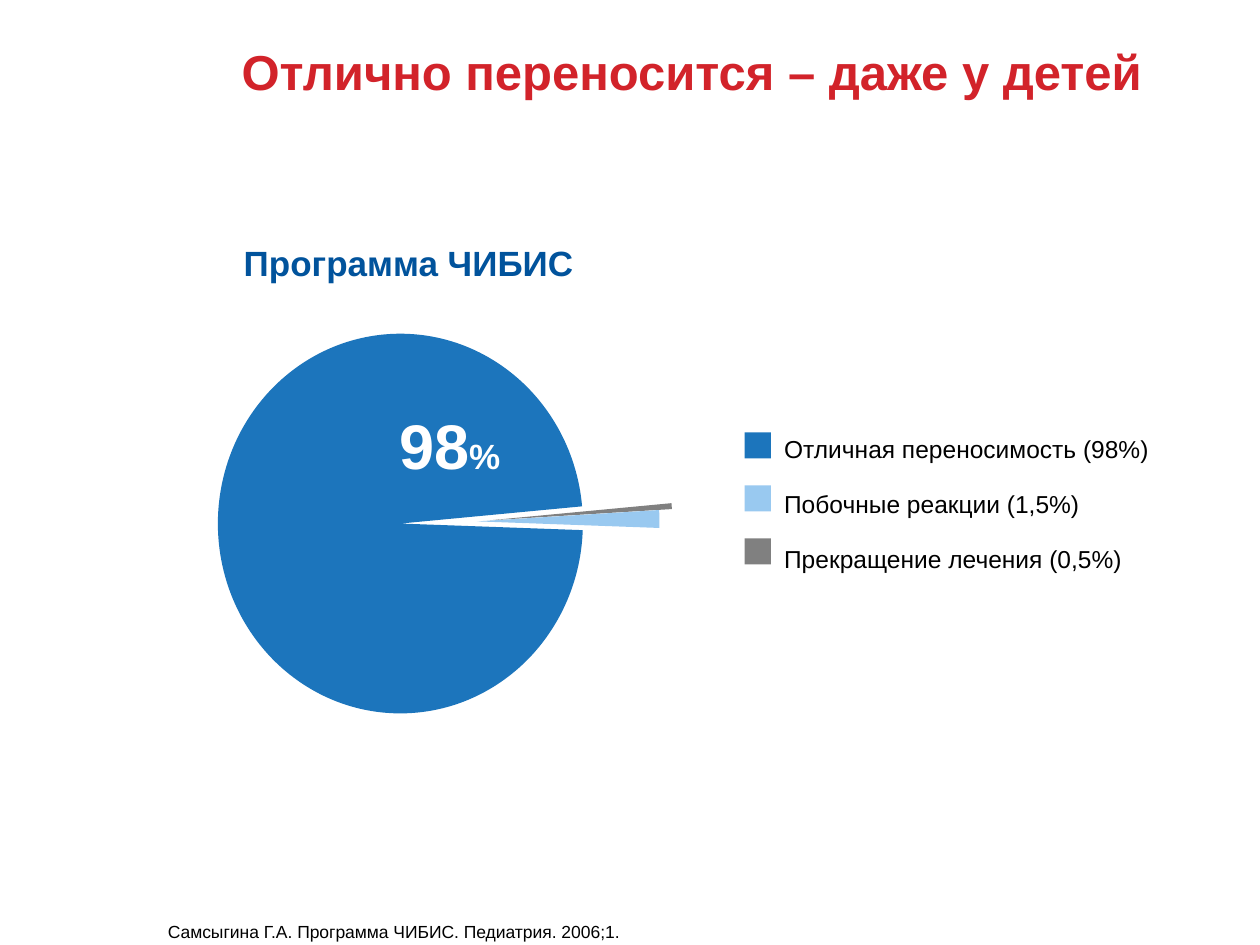
from lxml.etree import SubElement
from pptx import Presentation
from pptx.chart.data import CategoryChartData
from pptx.dml.color import RGBColor
from pptx.enum.chart import XL_CHART_TYPE
from pptx.enum.shapes import MSO_SHAPE
from pptx.enum.text import MSO_ANCHOR, PP_ALIGN
from pptx.oxml import parse_xml
from pptx.oxml.ns import nsdecls, qn
from pptx.util import Pt

FONT = "Arial"
TITLE = "Отлично переносится – даже у детей"
SUBTITLE = "Программа ЧИБИС"
SOURCE = "Самсыгина Г.А. Программа ЧИБИС. Педиатрия. 2006;1."
LEGEND = [
    ("Отличная переносимость (98%)", "1C75BC"),
    ("Побочные реакции (1,5%)", "99C9F0"),
    ("Прекращение лечения (0,5%)", "808080"),
]
SLICES = [("1", 98, "1C75BC", 42), ("2", 0.5, "808080", 7), ("3", 1.5, "99C9F0", 0)]
SERIES_EXPLOSION = 5
START_ANGLE = 92
PLOT = {"x": 0.091, "y": 0.035, "w": 0.746, "h": 0.898}


def color(value):
    return RGBColor.from_string(value)


def style(font, size, value, bold=False):
    font.name, font.size, font.bold = FONT, Pt(size), bold
    font.color.rgb = color(value)


def write(shape, text, size, value, bold=False, align=PP_ALIGN.LEFT, spacing=None, wrap=True):
    frame = shape.text_frame
    frame.text = text
    frame.word_wrap = wrap
    frame.vertical_anchor = MSO_ANCHOR.TOP
    para = frame.paragraphs[0]
    para.alignment, para.line_spacing = align, spacing
    para.space_before = Pt(0)
    style(para.runs[0].font, size, value, bold)
    return para


def add_text(page, place, *args, **options):
    box = page.shapes.add_textbox(*map(Pt, place))
    return write(box, *args, **options)


def explosion(percent):
    return parse_xml(f'<c:explosion {nsdecls("c")} val="{percent}"/>')


def add_pie(page, place):
    data = CategoryChartData()
    data.categories = [name for name, *_ in SLICES]
    data.add_series("Series 1", [value for _, value, *_ in SLICES])
    chart = page.shapes.add_chart(XL_CHART_TYPE.PIE, *map(Pt, place), data).chart
    chart.has_title = chart.has_legend = False
    style(chart.font, 18, "000000", True)

    plot = chart.plots[0]
    plot.vary_by_categories = True
    series = plot.series[0]
    for index, (_, _, fill, _) in enumerate(SLICES):
        point_format = series.points[index].format
        point_format.fill.solid()
        point_format.fill.fore_color.rgb = color(fill)
        point_format.line.fill.background()

    pie = chart.element.find(".//" + qn("c:pieChart"))
    points = pie.findall(".//" + qn("c:dPt"))
    for point, (*_, percent) in zip(points, SLICES):
        point.find(qn("c:spPr")).addprevious(explosion(percent))
    points[0].addprevious(explosion(SERIES_EXPLOSION))
    for angle in pie.findall(qn("c:firstSliceAng")):
        pie.remove(angle)
    SubElement(pie, qn("c:firstSliceAng")).set("val", str(START_ANGLE))

    area = pie.getparent()
    for layout in area.findall(qn("c:layout")):
        area.remove(layout)
    settings = {"layoutTarget": "inner", "xMode": "edge", "yMode": "edge", **PLOT}
    parts = "".join(f'<c:{name} val="{value}"/>' for name, value in settings.items())
    area.insert(0, parse_xml(
        f'<c:layout {nsdecls("c")}><c:manualLayout>{parts}</c:manualLayout></c:layout>'))


def add_legend(page):
    for row, (label, fill) in enumerate(LEGEND):
        swatch = page.shapes.add_shape(
            MSO_SHAPE.RECTANGLE, *map(Pt, (425.5, 247 + 30.3 * row, 15, 15)))
        swatch.shadow.inherit = False
        swatch.fill.solid()
        swatch.fill.fore_color.rgb = color(fill)
        swatch.line.fill.background()
        add_text(page, (441, 234.5 + 31.3 * row, 255, 31), label, 14, "000000", spacing=1.6)


def main():
    """Build the tolerability slide with its pie chart and legend."""
    deck = Presentation()
    deck.slide_width, deck.slide_height = Pt(720), Pt(540)
    page = deck.slides.add_slide(deck.slide_layouts[5])

    title = page.shapes.title
    title.left, title.top, title.width, title.height = map(Pt, (70.5, 20, 649.5, 41))
    write(title, TITLE, 28, "D2232A", True, PP_ALIGN.CENTER)

    add_pie(page, (124.5, 175, 305.5, 254))
    share = add_text(page, (221, 203, 73, 77), "98", 36, "FFFFFF", True, spacing=1.6, wrap=False)
    sign = share.add_run()
    sign.text = "%"
    style(sign.font, 20, "FFFFFF", True)

    add_legend(page)
    add_text(page, (88.8, 522.7, 284, 19), SOURCE, 10, "000000")
    add_text(page, (114, 134.5, 239, 32), SUBTITLE, 20, "01539C", True, align=PP_ALIGN.CENTER)
    deck.save("out.pptx")


if __name__ == "__main__":
    main()
